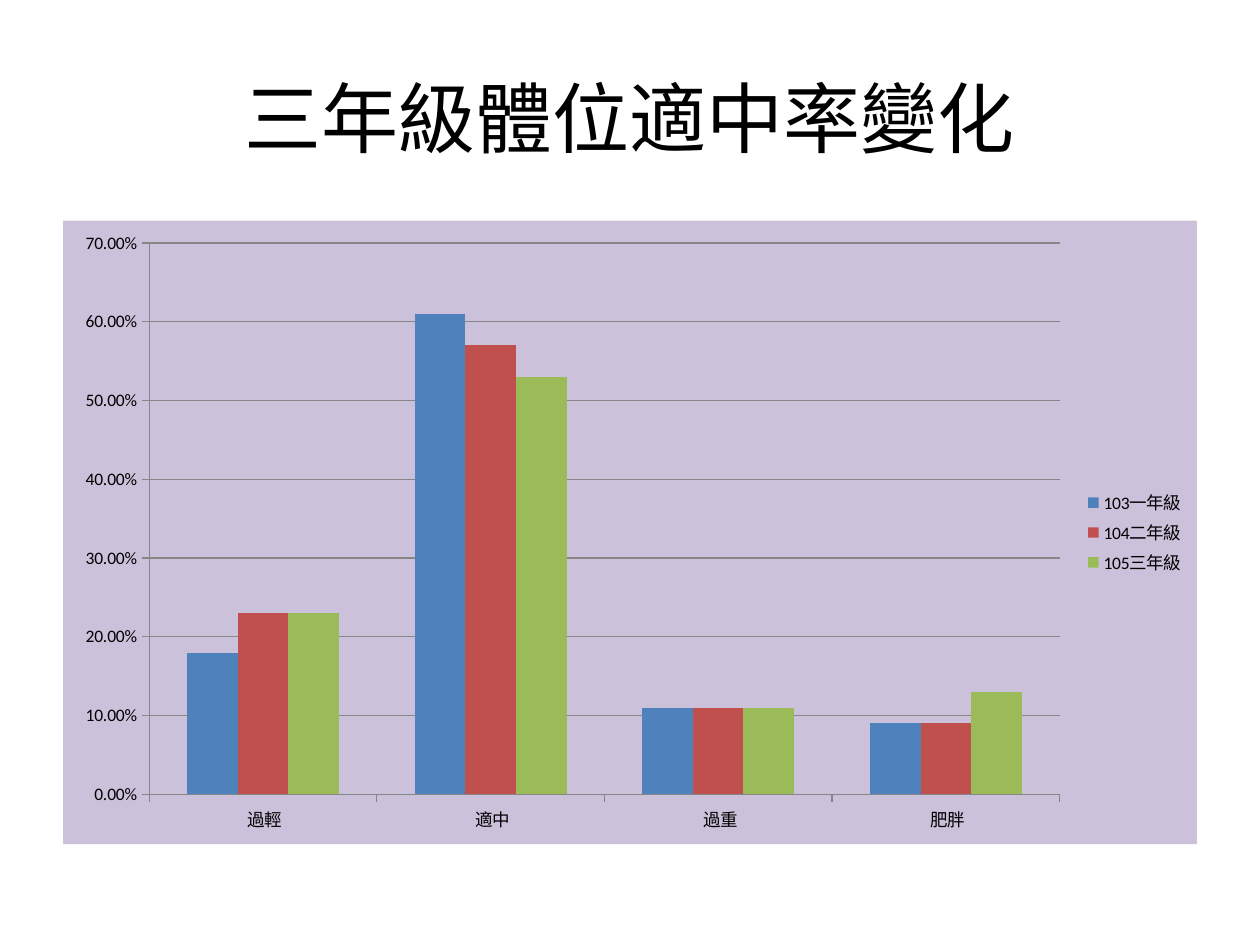
import pptx
import pptx.chart.data
import pptx.dml.color
import pptx.enum.chart
import pptx.enum.text
import pptx.oxml
import pptx.util
from pptx.util import Cm


def color(hex_text):
    return pptx.dml.color.RGBColor.from_string(hex_text)


class SlideBuilder:
    font_name = "Calibri"
    text_color = "000000"
    line_color = "868686"
    panel_color = "CCC1DA"

    def __init__(self, deck):
        self.page = deck.slides.add_slide(deck.slide_layouts[5])

    def style_font(self, font, size):
        font.name = self.font_name
        font.size = pptx.util.Pt(size)
        font.color.rgb = color(self.text_color)

    def style_line(self, line):
        line.color.rgb = color(self.line_color)
        line.width = pptx.util.Pt(0.75)

    def add_title(self, text, left, top, width, height):
        box = self.page.shapes.title
        box.left, box.top, box.width, box.height = left, top, width, height
        frame = box.text_frame
        frame.text = text
        frame.vertical_anchor = pptx.enum.text.MSO_ANCHOR.MIDDLE
        para = frame.paragraphs[0]
        para.alignment = pptx.enum.text.PP_ALIGN.CENTER
        self.style_font(para.runs[0].font, 44)

    def add_column_chart(self, categories, series, left, top, width, height):
        data = pptx.chart.data.CategoryChartData(number_format="0.00%")
        data.categories = categories
        for name, values, _ in series:
            data.add_series(name, values)
        chart = self.page.shapes.add_chart(
            pptx.enum.chart.XL_CHART_TYPE.COLUMN_CLUSTERED,
            left, top, width, height, data).chart
        self.style_font(chart.font, 10)
        chart.has_title = False
        self.fill_chart(chart)

        # Columns
        plot = chart.plots[0]
        plot.gap_width = 150
        plot.overlap = 0
        plot.vary_by_categories = False
        for column, (_, _, fill) in zip(plot.series, series):
            column.format.fill.solid()
            column.format.fill.fore_color.rgb = color(fill)

        # Axes and gridlines
        for axis in (chart.category_axis, chart.value_axis):
            axis.major_tick_mark = pptx.enum.chart.XL_TICK_MARK.OUTSIDE
            self.style_line(axis.format.line)
        scale = chart.value_axis
        scale.minimum_scale, scale.maximum_scale, scale.major_unit = 0, 0.7, 0.1
        scale.has_major_gridlines = True
        self.style_line(scale.major_gridlines.format.line)
        scale.tick_labels.number_format = "0.00%"
        scale.tick_labels.number_format_is_linked = False

        # Legend
        chart.has_legend = True
        chart.legend.position = pptx.enum.chart.XL_LEGEND_POSITION.RIGHT
        chart.legend.include_in_layout = False

    def fill_chart(self, chart):
        namespaces = pptx.oxml.ns.nsdecls("c", "a")
        properties = pptx.oxml.parse_xml(
            f'<c:spPr {namespaces}><a:solidFill><a:srgbClr val="{self.panel_color}"/>'
            "</a:solidFill><a:ln><a:noFill/></a:ln></c:spPr>")
        chart.element.find(pptx.oxml.ns.qn("c:chart")).addnext(properties)


def main():
    deck = pptx.Presentation()
    deck.slide_width, deck.slide_height = Cm(25.4), Cm(19.05)
    builder = SlideBuilder(deck)

    builder.add_title("三年級體位適中率變化", Cm(1.27), Cm(0.76), Cm(22.86), Cm(3.18))
    builder.add_column_chart(
        [" 過輕", " 適中", " 過重", " 肥胖"],
        [("103一年級", (0.18, 0.61, 0.11, 0.09), "4F81BD"),
         ("104二年級", (0.23, 0.57, 0.11, 0.09), "C0504D"),
         ("105三年級", (0.23, 0.53, 0.11, 0.13), "9BBB59")],
        Cm(1.27), Cm(4.45), Cm(22.86), Cm(12.57))

    deck.save("out.pptx")


if __name__ == "__main__":
    main()
